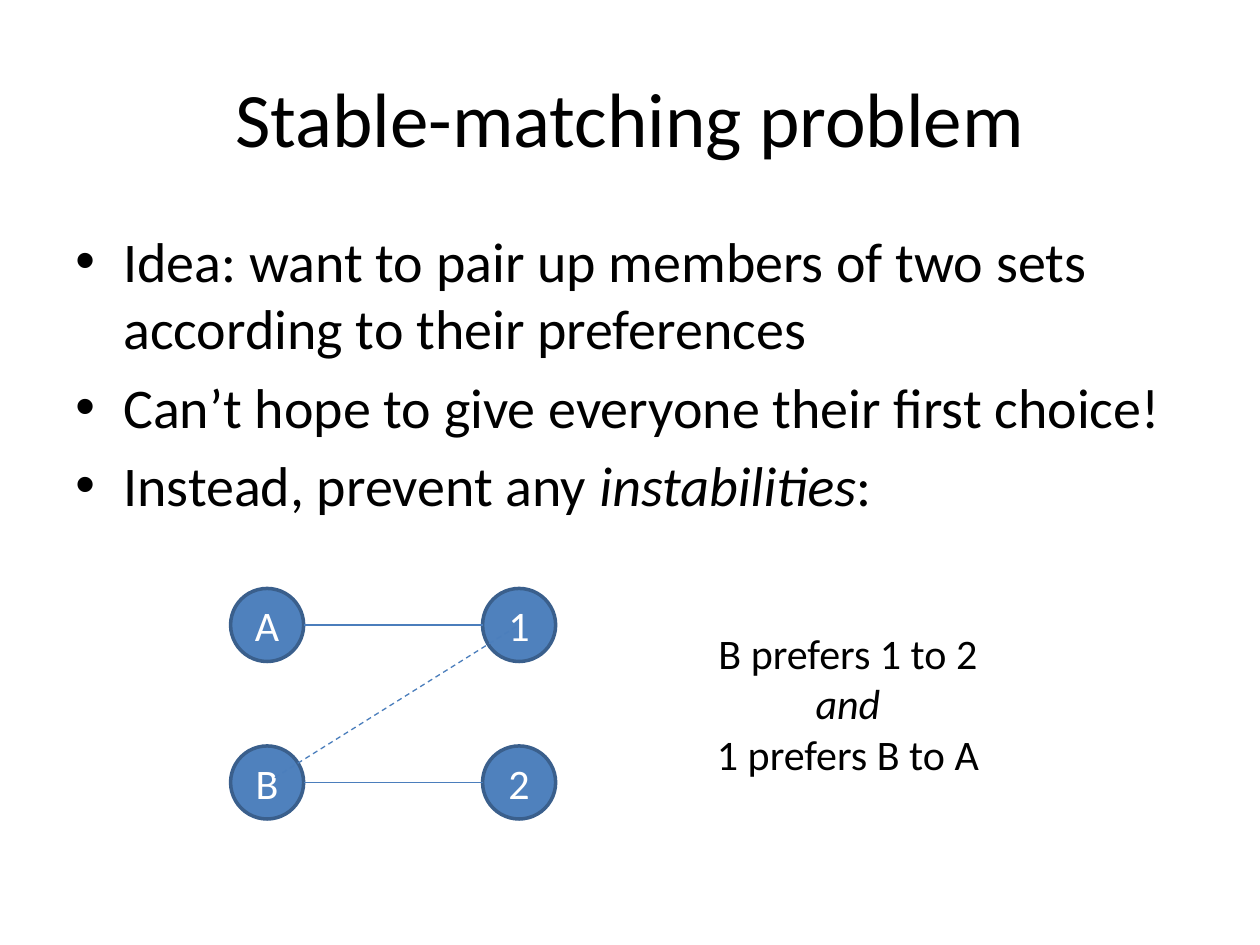
"""Build the stable-matching problem slide."""
from dataclasses import dataclass

from lxml.etree import SubElement
from pptx import Presentation
from pptx.dml.color import RGBColor
from pptx.enum.dml import MSO_LINE_DASH_STYLE as Dash
from pptx.enum.shapes import MSO_CONNECTOR as Connector, MSO_SHAPE as Shape
from pptx.enum.text import MSO_ANCHOR as Anchor, MSO_AUTO_SIZE as AutoSize, PP_ALIGN as Align
from pptx.oxml.ns import qn
from pptx.slide import Slide
from pptx.util import Inches, Pt

BLACK = RGBColor(0x00, 0x00, 0x00)
WHITE = RGBColor(0xFF, 0xFF, 0xFF)
NODE_FILL = RGBColor(0x4F, 0x81, 0xBD)
NODE_EDGE = RGBColor(0x3A, 0x5F, 0x8C)
PAIR_LINE = RGBColor(0x4B, 0x7E, 0xBC)

NODE_SIZE = 0.58
RADIUS = NODE_SIZE / 2
CENTERS = {
    name: (x, y)
    for name, x, y in [("A", 2.12, 4.96), ("B", 2.12, 6.21), ("1", 4.12, 4.96), ("2", 4.12, 6.21)]
}


@dataclass
class MatchingSlide:
    slide: Slide
    font: str = "Calibri"

    def style_runs(self, paragraph, runs, size, color=BLACK, align=Align.CENTER):
        paragraph.alignment = align
        paragraph.font.name = self.font
        paragraph.font.size = Pt(size)
        paragraph.font.color.rgb = color
        for words, italic in runs:
            if words == "\n":
                paragraph.add_line_break()
                continue
            run = paragraph.add_run()
            run.text = words
            if italic:
                run.font.italic = True

    def text(self, box, paragraphs, size, align=Align.CENTER, anchor=Anchor.TOP, wrap=True):
        frame = self.slide.shapes.add_textbox(*map(Inches, box)).text_frame
        frame.word_wrap = wrap
        frame.vertical_anchor = anchor
        for index, runs in enumerate(paragraphs):
            paragraph = frame.add_paragraph() if index else frame.paragraphs[0]
            self.style_runs(paragraph, runs, size, align=align)
        return frame

    def bullets(self, box, paragraphs, size):
        frame = self.text(box, paragraphs, size, Align.LEFT)
        for paragraph in frame.paragraphs:
            paragraph.space_before = Pt(size * 0.2)
            properties = paragraph._p.get_or_add_pPr()
            properties.set("marL", str(Inches(0.38)))
            properties.set("indent", str(-Inches(0.38)))
            SubElement(properties, qn("a:buFont")).set("typeface", "Arial")
            SubElement(properties, qn("a:buChar")).set("char", "•")
            properties.append(properties.find(qn("a:defRPr")))

    def node(self, name, center):
        left, top = (Inches(value - RADIUS) for value in center)
        circle = self.slide.shapes.add_shape(
            Shape.OVAL, left, top, Inches(NODE_SIZE), Inches(NODE_SIZE)
        )
        circle.shadow.inherit = False
        circle.fill.solid()
        circle.fill.fore_color.rgb = NODE_FILL
        circle.line.color.rgb = NODE_EDGE
        circle.line.width = Pt(2)
        frame = circle.text_frame
        frame.vertical_anchor = Anchor.MIDDLE
        frame.margin_left = frame.margin_right = 0
        self.style_runs(frame.paragraphs[0], [(name, False)], 24, WHITE)

    def link(self, start, end, dash=None):
        line = self.slide.shapes.add_connector(Connector.STRAIGHT, *map(Inches, (*start, *end)))
        line.line.color.rgb = PAIR_LINE
        line.line.width = Pt(0.75)
        if dash:
            line.line.dash_style = dash
        SubElement(line._element.spPr, qn("a:effectLst"))


def main():
    deck = Presentation()
    deck.slide_width, deck.slide_height = Inches(10), Inches(7.5)
    page = MatchingSlide(deck.slides.add_slide(deck.slide_layouts[6]))

    page.text(
        (0.5, 0.3, 9, 1.25), [[("Stable-matching problem", False)]], 44, anchor=Anchor.MIDDLE
    )
    page.bullets(
        (0.5, 1.75, 9, 2.58),
        [
            [("Idea: want to pair up members of two sets according to their preferences", False)],
            [("Can’t hope to give everyone their first choice!", False)],
            [("Instead, prevent any ", False), ("instabilities", True), (":", False)],
        ],
        32,
    )

    for name, center in CENTERS.items():
        page.node(name, center)
    for left, right in ("A1", "B2"):
        (x1, y1), (x2, y2) = CENTERS[left], CENTERS[right]
        page.link((x1 + RADIUS, y1), (x2 - RADIUS, y2))
    page.link(CENTERS["B"], CENTERS["1"], Dash.DASH)

    reason = page.text(
        (5.58, 4.93, 2.3, 1.31),
        [
            [("B prefers 1 to 2", False), ("\n", False), ("and", True)],
            [("1 prefers B to A", False)],
        ],
        24,
        wrap=False,
    )
    reason.auto_size = AutoSize.SHAPE_TO_FIT_TEXT

    deck.save("out.pptx")


if __name__ == "__main__":
    main()
